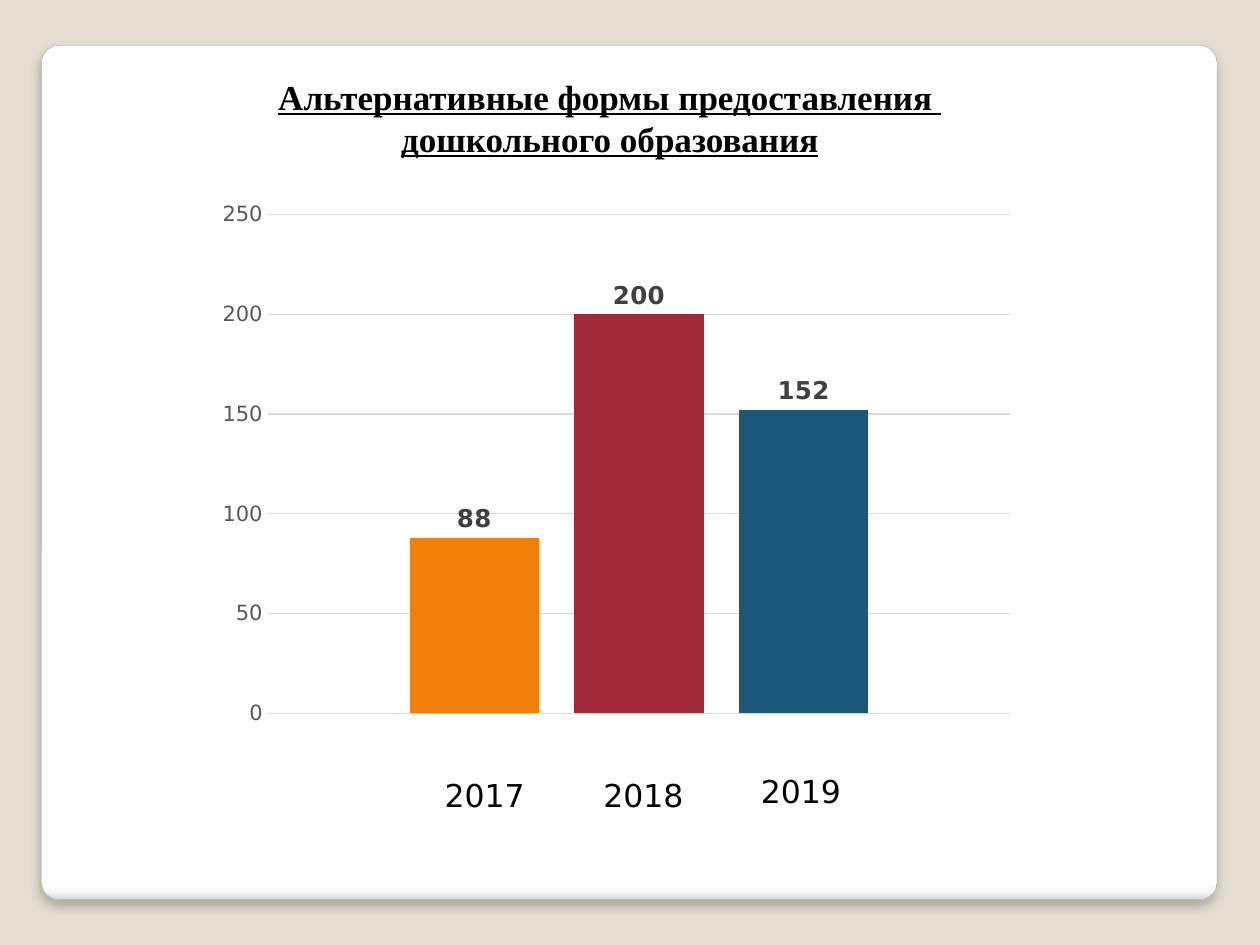
from dataclasses import dataclass

from lxml import etree
from pptx import Presentation
from pptx.chart.data import CategoryChartData
from pptx.dml.color import RGBColor
from pptx.enum import chart as ch, shapes, text
from pptx.oxml import parse_xml
from pptx.oxml.ns import nsdecls, qn
from pptx.util import Inches, Pt


@dataclass(frozen=True)
class Theme:
    back: str = "E3DED1"
    edge: str = "A4A4A4"
    ink: str = "000000"
    axis: str = "595959"
    label: str = "404040"
    grid: str = "D9D9D9"
    sans: str = "DejaVu Sans"
    serif: str = "Times New Roman"
    title: int = 20
    year: int = 18
    value: int = 14
    tick: int = 12
    base: int = 10


THEME = Theme()
STOPS = [(0, "FFFFFF"), (98, "FFFFFF"), (99, "F7F7F7"), (100, "DADADA")]
TITLE = ["Альтернативные формы предоставления ", "дошкольного образования"]
BARS = [(88, "F07F09"), (200, "9F2936"), (152, "1B587C")]
YEARS = [("2017", 3.43, 6.11), ("2018", 4.69, 6.11), ("2019", 5.94, 6.08)]


def rgb(code):
    return RGBColor.from_string(code)


def style(font, size, color, face=THEME.sans, bold=False):
    font.size, font.name, font.bold = Pt(size), face, bold
    font.color.rgb = rgb(color)


def add_panel(slide, x, y, w, h):
    """Rounded card with a shaded lower edge and a soft shadow."""
    card = slide.shapes.add_shape(
        shapes.MSO_SHAPE.ROUNDED_RECTANGLE, Inches(x), Inches(y), Inches(w), Inches(h))
    card.adjustments[0] = 0.021
    card.line.color.rgb = rgb(THEME.edge)
    card.line.width = Pt(0.16)
    stops = "".join(f'<a:gs pos="{p * 1000}"><a:srgbClr val="{c}"/></a:gs>' for p, c in STOPS)
    props = card.element.spPr
    props.find(qn("a:prstGeom")).addnext(parse_xml(
        f'<a:gradFill {nsdecls("a")} rotWithShape="1"><a:gsLst>{stops}</a:gsLst>'
        '<a:lin ang="5400000" scaled="0"/></a:gradFill>'))
    props.append(parse_xml(
        f'<a:effectLst {nsdecls("a")}><a:outerShdw blurRad="{Pt(6)}" dist="{Pt(4)}" '
        'dir="5400000" algn="tl" rotWithShape="0"><a:srgbClr val="000000">'
        '<a:alpha val="25000"/></a:srgbClr></a:outerShdw></a:effectLst>'))


def add_text(slide, x, y, w, h, lines, size, face=THEME.sans, head=False):
    box = slide.shapes.add_textbox(Inches(x), Inches(y), Inches(w), Inches(h))
    frame = box.text_frame
    frame.word_wrap = True
    frame.auto_size = text.MSO_AUTO_SIZE.SHAPE_TO_FIT_TEXT
    for i, line in enumerate(lines):
        para = frame.add_paragraph() if i else frame.paragraphs[0]
        para.alignment = text.PP_ALIGN.CENTER if head else text.PP_ALIGN.LEFT
        run = para.add_run()
        run.text = line
        style(run.font, size, THEME.ink, face, head)
        run.font.underline = head


def set_plot(chart, **parts):
    """Fix the inner plot area, in fractions of the chart box."""
    area = chart.element.chart.plotArea
    for old in area.findall(qn("c:layout")):
        area.remove(old)
    layout = etree.Element(qn("c:layout"))
    manual = etree.SubElement(layout, qn("c:manualLayout"))
    modes = {"layoutTarget": "inner", "xMode": "edge", "yMode": "edge"}
    for tag, val in {**modes, **parts}.items():
        etree.SubElement(manual, qn(f"c:{tag}")).set("val", str(val))
    area.insert(0, layout)


def add_bars(slide, x, y, w, h):
    data = CategoryChartData()
    data.categories = ["1"]
    for i, (val, _) in enumerate(BARS, 1):
        data.add_series(f"Series {i}", [val])
    chart = slide.shapes.add_chart(
        ch.XL_CHART_TYPE.COLUMN_CLUSTERED, Inches(x), Inches(y), Inches(w), Inches(h), data).chart
    chart.has_legend = chart.has_title = False
    style(chart.font, THEME.base, THEME.ink)
    set_plot(chart, x=0.07, y=0.04, w=0.91, h=0.91)

    chart.category_axis.visible = False
    axis = chart.value_axis
    axis.minimum_scale, axis.maximum_scale, axis.major_unit = 0, 250, 50
    axis.major_tick_mark = axis.minor_tick_mark = ch.XL_TICK_MARK.NONE
    axis.format.line.fill.background()
    axis.major_gridlines.format.line.color.rgb = rgb(THEME.grid)
    axis.major_gridlines.format.line.width = Pt(0.75)
    style(axis.tick_labels.font, THEME.tick, THEME.axis)

    plot = chart.plots[0]
    plot.vary_by_categories = False
    plot.gap_width, plot.overlap = 219, -27
    for bar, (_, color) in zip(plot.series, BARS):
        bar.format.fill.solid()
        bar.format.fill.fore_color.rgb = rgb(color)
        labels = bar.data_labels
        labels.show_value = True
        labels.position = ch.XL_LABEL_POSITION.OUTSIDE_END
        style(labels.font, THEME.value, THEME.label, bold=True)


def main():
    deck = Presentation()
    deck.slide_width, deck.slide_height = Inches(10), Inches(7.5)
    slide = deck.slides.add_slide(deck.slide_layouts[6])
    slide.background.fill.solid()
    slide.background.fill.fore_color.rgb = rgb(THEME.back)
    add_panel(slide, 0.33, 0.36, 9.33, 6.78)
    add_text(slide, 0.7, 0.55, 8.28, 0.77, TITLE, THEME.title, THEME.serif, head=True)
    add_bars(slide, 1.67, 1.53, 6.48, 4.35)
    for year, x, y in YEARS:
        add_text(slide, x, y, 0.87, 0.4, [year], THEME.year)
    deck.save("out.pptx")


if __name__ == "__main__":
    main()
